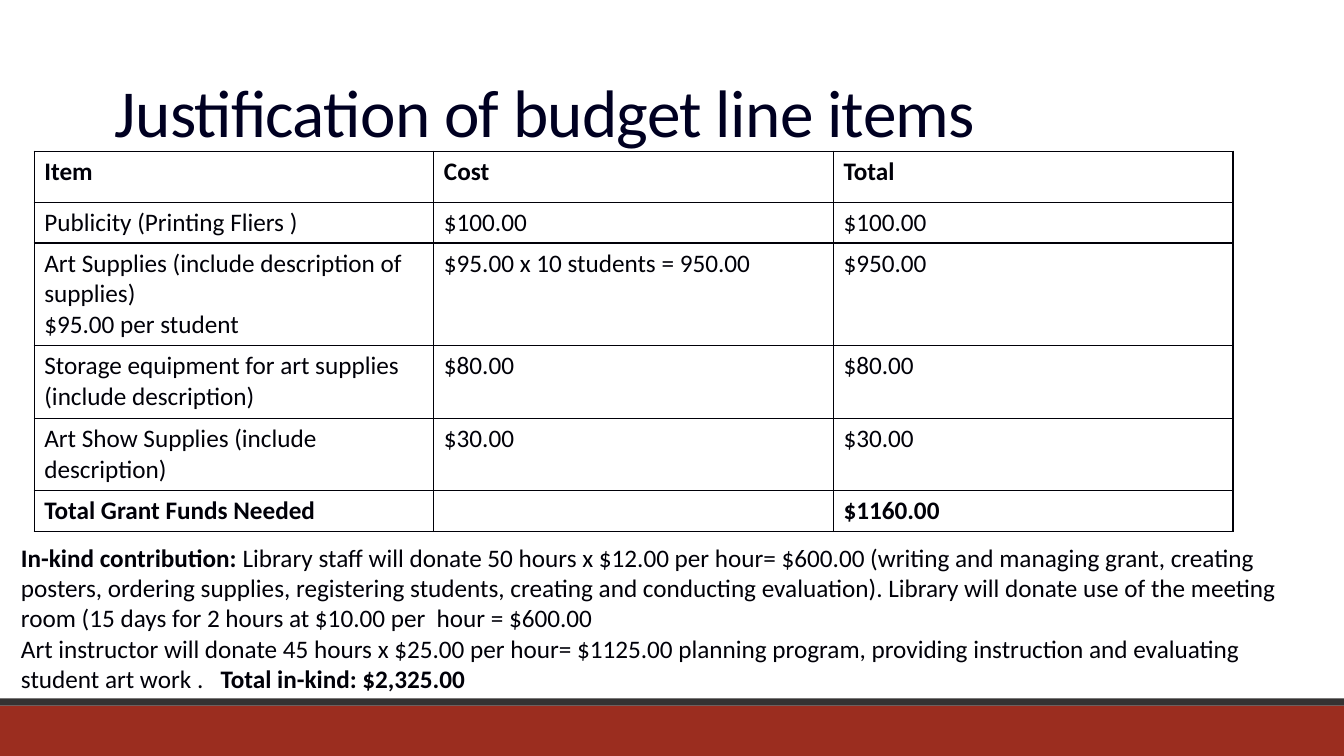
import pptx
import pptx.util
import pptx.dml.color
import pptx.enum.shapes
import pptx.enum.text
import pptx.oxml.ns
from lxml import etree
from pptx.util import Inches

ROWS = [
    ("Item", "Cost", "Total"),
    ("Publicity (Printing Fliers )", "$100.00", "$100.00"),
    ("Art Supplies (include description of supplies)\n$95.00 per student",
     "$95.00 x 10 students = 950.00", "$950.00"),
    ("Storage equipment for art supplies (include description)", "$80.00", "$80.00"),
    ("Art Show Supplies (include description)", "$30.00", "$30.00"),
    ("Total Grant Funds Needed", "", "$1160.00"),
]
HEIGHTS = [0.51, 0.4, 1.02, 0.72, 0.72, 0.4]
NOTES = [
    [("In-kind contribution: ", True),
     ("Library staff will donate 50 hours x $12.00 per hour= $600.00 (writing and "
      "managing grant, creating posters, ordering supplies, registering students, "
      "creating and conducting evaluation). Library will donate use of the meeting "
      "room (15 days for 2 hours at $10.00 per  hour = $600.00", False)],
    [("Art instructor will donate 45 hours x $25.00 per hour= $1125.00 planning "
      "program, providing instruction and evaluating student art work .\t", False),
     ("Total in-kind: $2,325.00", True)],
]


def color(code):
    return pptx.dml.color.RGBColor.from_string(code)


def child(node, tag, **attrs):
    return etree.SubElement(node, pptx.oxml.ns.qn(tag), attrs)


class Deck:
    face = "Calibri"
    ink = "000008"
    size = 18

    def __init__(self, slide):
        self.slide = slide

    def style(self, run, bold=False, size=size, ink=ink):
        font = run.font
        font.name = self.face
        font.size = pptx.util.Pt(size)
        font.bold = bold
        font.color.rgb = color(ink)

    def band(self, top, height, fill):
        shape = self.slide.shapes.add_shape(
            pptx.enum.shapes.MSO_SHAPE.RECTANGLE,
            Inches(0), Inches(top), Inches(13.33), Inches(height))
        shape.shadow.inherit = False
        shape.fill.solid()
        shape.fill.fore_color.rgb = color(fill)
        shape.line.fill.background()

    def box(self, left, top, width, height):
        frame = self.slide.shapes.add_textbox(
            Inches(left), Inches(top), Inches(width), Inches(height)).text_frame
        frame.word_wrap = True
        return frame

    def title(self, text):
        frame = self.box(1.04, 0.34, 11, 1.21)
        frame.vertical_anchor = pptx.enum.text.MSO_ANCHOR.BOTTOM
        frame.text = text
        para = frame.paragraphs[0]
        para.line_spacing = 0.85
        run = para.runs[0]
        self.style(run, size=48, ink="000021")
        run.font._element.set("spc", "-50")

    def table(self, rows, heights):
        grid = self.slide.shapes.add_table(
            len(rows), len(rows[0]), Inches(0.34), Inches(1.5),
            Inches(11.89), Inches(sum(heights))).table
        grid.first_row = grid.horz_banding = False
        for row, height in zip(grid.rows, heights):
            row.height = Inches(height)
        for y, row in enumerate(rows):
            for x, text in enumerate(row):
                self.cell(grid.cell(y, x), text, y in (0, len(rows) - 1))

    def cell(self, cell, text, bold):
        cell.text = text
        for para in cell.text_frame.paragraphs:
            for run in para.runs:
                self.style(run, bold)
        props = cell._tc.get_or_add_tcPr()
        for side in "LRTB":
            line = child(props, f"a:ln{side}", w=str(pptx.util.Pt(1)))
            child(child(line, "a:solidFill"), "a:srgbClr", val=self.ink)
        cell.fill.solid()
        cell.fill.fore_color.rgb = color("FFFFFF")

    def notes(self, paras):
        frame = self.box(0.11, 5.33, 12.84, 1.62)
        frame.auto_size = pptx.enum.text.MSO_AUTO_SIZE.SHAPE_TO_FIT_TEXT
        for i, parts in enumerate(paras):
            para = frame.add_paragraph() if i else frame.paragraphs[0]
            if i:
                tabs = child(para._p.get_or_add_pPr(), "a:tabLst")
                child(tabs, "a:tab", pos=str(Inches(1.98)), algn="l")
            for text, bold in parts:
                run = para.add_run()
                run.text = text
                self.style(run, bold)


def main():
    show = pptx.Presentation()
    show.slide_width = Inches(13.33)
    show.slide_height = Inches(7.5)
    deck = Deck(show.slides.add_slide(show.slide_layouts[6]))
    deck.band(7, 0.5, "9B2D1F")
    deck.band(6.93, 0.07, "343232")
    deck.title("Justification of budget line items")
    deck.table(ROWS, HEIGHTS)
    deck.notes(NOTES)
    show.save("out.pptx")


if __name__ == "__main__":
    main()
